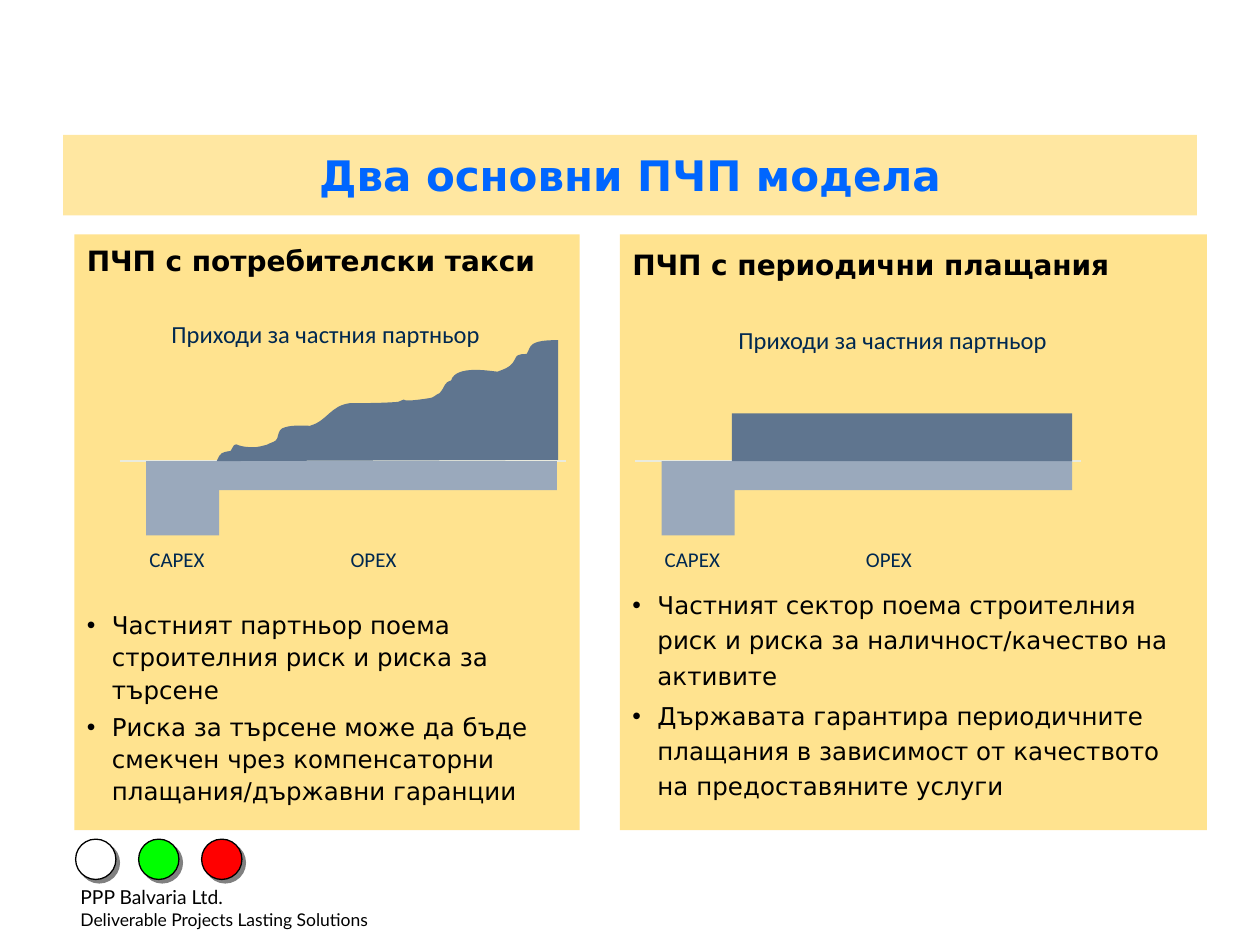
from dataclasses import dataclass

from lxml.etree import SubElement
from pptx import Presentation
from pptx.dml.color import RGBColor as Rgb
from pptx.enum.shapes import MSO_CONNECTOR as Connector
from pptx.enum.shapes import MSO_SHAPE as Shape
from pptx.enum.text import MSO_ANCHOR as Anchor
from pptx.enum.text import MSO_AUTO_SIZE as AutoSize
from pptx.enum.text import PP_ALIGN as Align
from pptx.oxml.ns import qn
from pptx.util import Inches, Pt


@dataclass(frozen=True)
class Theme:
    panel: str = "FFC000"
    title: str = "0066FF"
    text: str = "000000"
    label: str = "002850"
    cost: str = "9AA9BC"
    revenue: str = "5F758F"
    axis: str = "EAEBDE"
    shadow: str = "808080"
    white: str = "FFFFFF"
    lights: tuple = ("FFFFFF", "00FF00", "FF0000")
    main_font: str = "DejaVu Sans"
    label_font: str = "Calibri"
    footer_font: str = "Lato"
    title_size: float = 24
    heading_size: float = 16
    body_size: float = 14
    label_size: float = 12
    company_size: float = 11
    slogan_size: float = 10


AXIS_Y = 3.66
DIAGRAM_STEP = 4.09
REVENUE_CURVES = [
    ((1.75, 3.59), (1.76, 3.59), (1.83, 3.58)),
    ((1.89, 3.48), (1.83, 3.55), (2.01, 3.55)),
    ((2.05, 3.55), (2.08, 3.54), (2.12, 3.53)),
    ((2.15, 3.51), (2.19, 3.51), (2.2, 3.48)),
    ((2.21, 3.45), (2.21, 3.42), (2.24, 3.4)),
    ((2.31, 3.37), (2.39, 3.38), (2.46, 3.38)),
    ((2.6, 3.34), (2.62, 3.22), (2.78, 3.2)),
    ((2.91, 3.2), (3.03, 3.2), (3.16, 3.19)),
    ((3.28, 3.14), (3.09, 3.21), (3.41, 3.16)),
    ((3.44, 3.16), (3.46, 3.13), (3.49, 3.12)),
    ((3.54, 3.06), (3.52, 3.04), (3.58, 3.02)),
    ((3.62, 2.89), (3.91, 2.95), (3.95, 2.95)),
    ((4, 2.93), (4.04, 2.92), (4.07, 2.88)),
    ((4.09, 2.86), (4.09, 2.83), (4.11, 2.82)),
    ((4.13, 2.81), (4.15, 2.81), (4.18, 2.81)),
    ((4.2, 2.78), (4.2, 2.75), (4.23, 2.73)),
    ((4.28, 2.7), (4.37, 2.7), (4.43, 2.7)),
]


class SlideBuilder:
    """Draws styled elements on the current slide."""

    def __init__(self, slide, theme):
        self.slide, self.theme = slide, theme

    def format_runs(self, paragraph, size, font, color, bold=False):
        for run in paragraph.runs:
            run.font.size, run.font.name, run.font.bold = Pt(size), font, bold
            run.font.color.rgb = Rgb.from_string(color)

    def paint(self, shape, color, opacity=100):
        shape.fill.solid()
        shape.fill.fore_color.rgb = Rgb.from_string(color)
        if opacity < 100:
            fill_color = shape.element.spPr.find(qn("a:solidFill"))[0]
            SubElement(fill_color, qn("a:alpha"), val=str(opacity * 1000))

    def title(self, text, box):
        shape, theme = self.slide.shapes.title, self.theme
        shape.left, shape.top, shape.width, shape.height = map(Inches, box)
        self.paint(shape, theme.panel, 37)
        shape.text_frame.text = text
        shape.text_frame.vertical_anchor = Anchor.MIDDLE
        paragraph = shape.text_frame.paragraphs[0]
        paragraph.alignment = Align.CENTER
        self.format_runs(paragraph, theme.title_size, theme.main_font, theme.title, True)

    def block(self, box, color, opacity=100, kind=Shape.RECTANGLE):
        shape = self.slide.shapes.add_shape(kind, *map(Inches, box))
        shape.shadow.inherit = False
        self.paint(shape, color, opacity)
        shape.line.fill.background()
        return shape

    def light(self, box, color):
        shape = self.block(box, color, kind=Shape.OVAL)
        shape.line.color.rgb = Rgb.from_string(self.theme.text)
        shape.line.width = Pt(0.75)
        effects = shape.element.spPr.find(qn("a:effectLst"))
        shadow = SubElement(effects, qn("a:outerShdw"), blurRad="0",
                            dist=str(Pt(2.8)), dir="2700000", algn="ctr", rotWithShape="0")
        SubElement(shadow, qn("a:srgbClr"), val=self.theme.shadow)

    def panel(self, box, heading, bullets, line_spacing, bullet_gap):
        theme = self.theme
        frame = self.block(box, theme.panel, 44).text_frame
        frame.word_wrap, frame.vertical_anchor = True, Anchor.TOP
        frame.text = "\n".join([heading, *bullets])
        for index, paragraph in enumerate(frame.paragraphs):
            paragraph.alignment = Align.LEFT
            paragraph.line_spacing = line_spacing
            paragraph.space_before = Pt((0, bullet_gap, 2.8)[index])
            size = theme.body_size if index else theme.heading_size
            if index:
                properties = paragraph._p.get_or_add_pPr()
                properties.set("marL", str(Inches(0.2)))
                properties.set("indent", str(-Inches(0.2)))
                SubElement(properties, qn("a:buFont"), typeface="Arial")
                SubElement(properties, qn("a:buChar"), char="•")
            self.format_runs(paragraph, size, theme.main_font, theme.text, index == 0)

    def label(self, text, box, size):
        frame = self.slide.shapes.add_textbox(*map(Inches, box)).text_frame
        frame.text = text
        frame.word_wrap, frame.auto_size = False, AutoSize.SHAPE_TO_FIT_TEXT
        paragraph = frame.paragraphs[0]
        paragraph.alignment, paragraph.line_spacing = Align.CENTER, 1.3
        self.format_runs(paragraph, size, self.theme.label_font, self.theme.label)

    def axis(self, left, right, y):
        line = self.slide.shapes.add_connector(
            Connector.STRAIGHT, Inches(left), Inches(y), Inches(right), Inches(y))
        line.line.color.rgb = Rgb.from_string(self.theme.axis)
        line.line.width = Pt(0.75)
        SubElement(line.element.spPr, qn("a:effectLst"))

    def curved_area(self, start, curves, corner, color):
        points = [point for curve in curves for point in curve] + [corner]
        builder = self.slide.shapes.build_freeform(*map(Inches, start))
        builder.add_line_segments([tuple(map(Inches, point)) for point in points])
        shape = builder.convert_to_shape()
        segments = list(shape.element.iter(qn("a:lnTo")))
        for first in range(0, 3 * len(curves), 3):
            curve = SubElement(segments[first].getparent(), qn("a:cubicBezTo"))
            segments[first].addprevious(curve)
            for segment in segments[first:first + 3]:
                curve.append(segment[0])
                segment.getparent().remove(segment)
        shape.shadow.inherit = False
        self.paint(shape, color)
        shape.line.fill.background()

    def costs(self, offset):
        theme = self.theme
        self.axis(0.95 + offset, 4.49 + offset, AXIS_Y)
        self.block((1.16 + offset, AXIS_Y, 0.58, 0.59), theme.cost)
        self.block((1.72 + offset, AXIS_Y, 2.7, 0.23), theme.cost)
        self.label("CAPEX", (1.05 + offset, 4.23, 0.71, 0.36), theme.label_size)
        self.label("OPEX", (2.66 + offset, 4.23, 0.61, 0.36), theme.label_size)

    def footer(self, company, slogan, box):
        theme = self.theme
        frame = self.block(box, theme.white).text_frame
        frame.text = f"{company}\n{slogan}"
        frame.word_wrap, frame.vertical_anchor = True, Anchor.TOP
        for paragraph, size in zip(frame.paragraphs, (theme.company_size, theme.slogan_size)):
            paragraph.alignment = Align.LEFT
            self.format_runs(paragraph, size, theme.footer_font, theme.text)


def main():
    presentation = Presentation()
    presentation.slide_width, presentation.slide_height = Inches(10), Inches(7.5)
    theme = Theme()
    slide = SlideBuilder(presentation.slides.add_slide(presentation.slide_layouts[5]), theme)

    slide.footer("PPP Balvaria Ltd.", "Deliverable Projects Lasting Solutions",
                 (0.54, 6.98, 3.36, 0.47))
    for index, color in enumerate(theme.lights):
        slide.light((0.6 + 0.5 * index, 6.66, 0.32, 0.32), color)
    slide.title("Два основни ПЧП модела", (0.5, 1.07, 9, 0.64))
    slide.panel((0.59, 1.86, 4.01, 4.73), "ПЧП с потребителски такси", [
        "Частният партньор поема строителния риск и риска за търсене",
        "Риска за търсене може да бъде смекчен чрез компенсаторни плащания/държавни гаранции",
    ], 1.1, 188.3)
    slide.panel((4.92, 1.86, 4.66, 4.73), "ПЧП с периодични плащания", [
        "Частният сектор поема строителния риск и риска за наличност/качество на активите",
        "Държавата гарантира периодичните плащания в зависимост от качеството "
        "на предоставяните услуги",
    ], 1.2, 173.4)

    slide.costs(0)
    slide.curved_area((1.72, AXIS_Y), REVENUE_CURVES, (4.43, 3.65), theme.revenue)
    slide.costs(DIAGRAM_STEP)
    slide.block((1.72 + DIAGRAM_STEP, 3.28, 2.7, 0.38), theme.revenue)
    for left, top in ((1.14, 2.41), (5.64, 2.46)):
        slide.label("Приходи за частния партньор", (left, top, 2.89, 0.4), theme.body_size)

    presentation.save("out.pptx")


if __name__ == "__main__":
    main()
